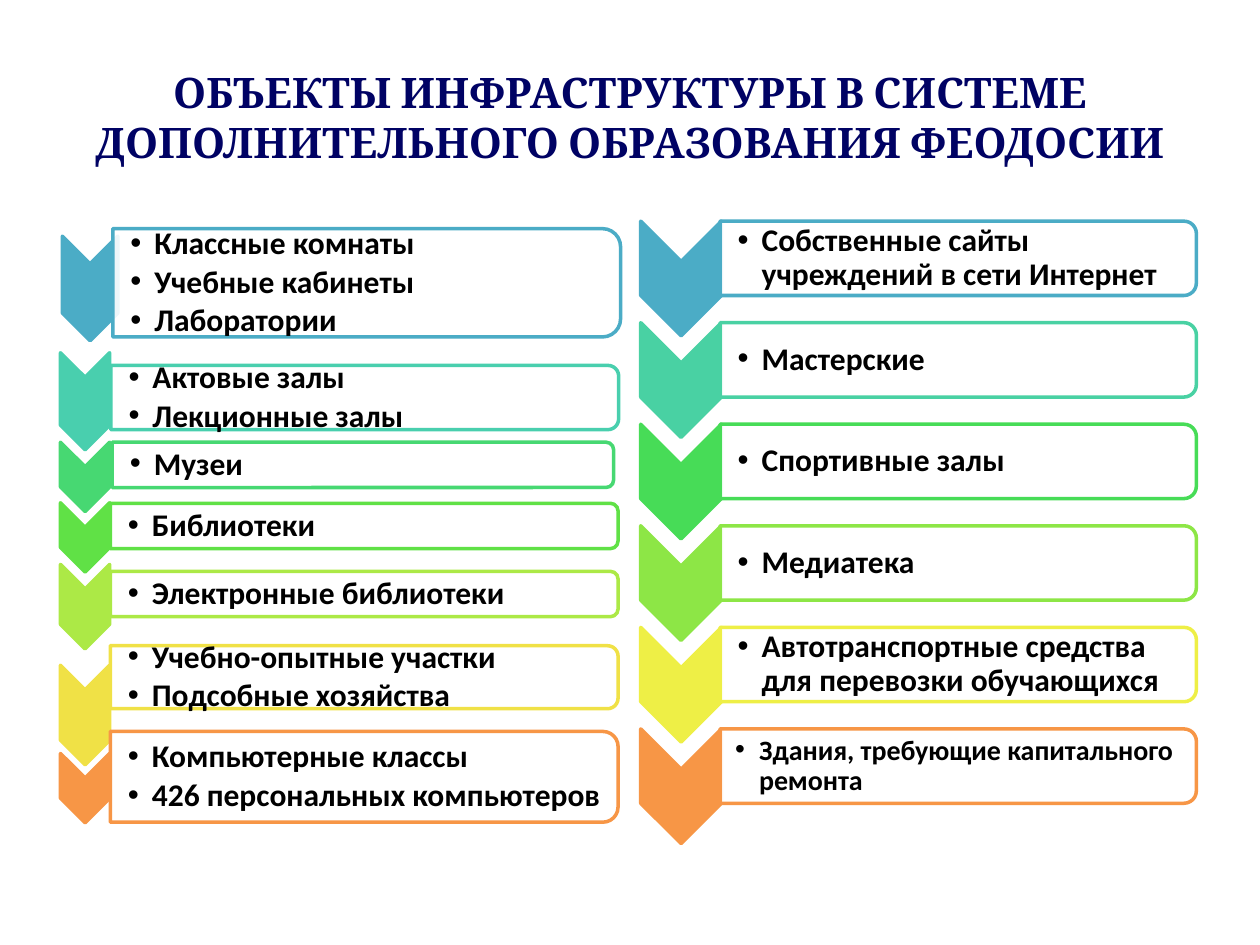
"""Builds a slide of two chevron lists on a grid of tenth-inch cells."""
import dataclasses
import typing

import lxml.etree
import pptx
import pptx.dml.color
import pptx.enum.shapes
import pptx.enum.text
import pptx.oxml.ns
import pptx.util

KIND = pptx.enum.shapes.MSO_SHAPE
ALIGN = pptx.enum.text.PP_ALIGN
ANCHOR = pptx.enum.text.MSO_ANCHOR


@dataclasses.dataclass(frozen=True)
class Theme:
    cell: float = 0.1
    navy: str = "000264"
    black: str = "000000"
    white: str = "FFFFFF"
    serif: str = "Cambria"
    sans: str = "Calibri"
    head: int = 24
    body: int = 18
    small: int = 16
    line: int = 2
    alpha: int = 90000


class Rect(typing.NamedTuple):
    x: float
    y: float
    w: float
    h: float


class Item(typing.NamedTuple):
    color: str
    arrow: Rect
    box: Rect
    lines: tuple[str, ...]
    size: int = 18
    inset: float = 1.4


THEME = Theme()

LEFT = [
    Item("4BACC6", Rect(4.95, 18.75, 4.4, 8.3), Rect(8.95, 18.15, 40.3, 8.6),
         ("Классные комнаты", "Учебные кабинеты", "Лаборатории")),
    Item("49CFAE", Rect(4.8, 28, 3.9, 7.7), Rect(8.8, 29, 40.3, 5.1),
         ("Актовые залы", "Лекционные залы")),
    Item("47D872", Rect(4.8, 35.1, 3.9, 5.5), Rect(8.9, 35.1, 39.8, 3.6),
         ("Музеи",)),
    Item("60E146", Rect(4.8, 39.9, 3.9, 5.5), Rect(8.75, 39.95, 40.3, 3.6),
         ("Библиотеки",)),
    Item("ACE946", Rect(4.8, 44.8, 3.9, 6.7), Rect(8.75, 45.35, 40.3, 3.6),
         ("Электронные библиотеки",)),
    Item("F0E146", Rect(4.8, 52.8, 3.9, 7.9), Rect(8.75, 51.25, 40.3, 5),
         ("Учебно-опытные участки", "Подсобные хозяйства")),
    Item("F79646", Rect(4.8, 59.8, 3.9, 5.5), Rect(8.75, 58.05, 40.3, 7.2),
         ("Компьютерные классы", "426 персональных компьютеров")),
]

RIGHT = [
    ("4BACC6", "Собственные сайты учреждений в сети Интернет"),
    ("49D1A3", "Мастерские"),
    ("47DC57", "Спортивные залы"),
    ("8DE646", "Медиатека"),
    ("EEEF46", "Автотранспортные средства для перевозки обучающихся"),
    ("F79646", "Здания, требующие капитального ремонта"),
]


def cells(count: float) -> int:
    """Turns grid cells into a length."""
    return pptx.util.Inches(count * THEME.cell)


def apply(target: typing.Any, values: dict[str, typing.Any]) -> None:
    """Sets each named value on the target."""
    for name, value in values.items():
        setattr(target, name, value)


def rgb(code: str) -> pptx.dml.color.RGBColor:
    """Reads a hex colour."""
    return pptx.dml.color.RGBColor.from_string(code)


def node(parent: typing.Any, tag: str, **attrs: str) -> typing.Any:
    """Adds a drawing element to its parent."""
    return lxml.etree.SubElement(parent, pptx.oxml.ns.qn(tag), attrs)


def turn(group: typing.Any, kind: typing.Any, rect: Rect, fill: str, line: str) -> typing.Any:
    """Draws a shape turned by a quarter so that it covers the rect."""
    left = rect.x + (rect.w - rect.h) / 2
    top = rect.y + (rect.h - rect.w) / 2
    shape = group.shapes.add_shape(kind, *map(cells, (left, top, rect.h, rect.w)))
    shape.rotation = 90
    shape.shadow.inherit = False
    shape.fill.solid()
    shape.fill.fore_color.rgb = rgb(fill)
    shape.line.color.rgb = rgb(line)
    shape.line.width = pptx.util.Pt(THEME.line)
    return shape


def write(para: typing.Any, text: str, face: str, size: int, color: str) -> None:
    """Adds one bold run to a paragraph."""
    run = para.add_run()
    run.text = text
    apply(run.font, {"name": face, "size": pptx.util.Pt(size), "bold": True})
    run.font.color.rgb = rgb(color)


def bullet(para: typing.Any) -> None:
    """Gives a paragraph its indent, spacing and bullet."""
    apply(para, {"level": 1, "alignment": ALIGN.LEFT, "line_spacing": 0.9})
    props = para._p.get_or_add_pPr()
    step = cells(1.9)
    props.set("marL", str(step))
    props.set("indent", str(-step))
    node(node(props, "a:spcAft"), "a:spcPct", val="15000")
    node(props, "a:buFont", typeface="Arial")
    node(props, "a:buChar", char="•")


def label(group: typing.Any, item: Item) -> None:
    """Writes the bulleted lines inside an item's box."""
    box = item.box
    pad = box.h * 0.05
    area = (box.x, box.y + pad, box.w - pad, box.h - 2 * pad)
    frame = group.shapes.add_textbox(*map(cells, area)).text_frame
    edge = cells(0.1)
    apply(frame, {"word_wrap": True, "vertical_anchor": ANCHOR.MIDDLE,
                  "margin_left": cells(item.inset), "margin_right": edge,
                  "margin_top": edge, "margin_bottom": edge})
    for index, text in enumerate(item.lines):
        para = frame.add_paragraph() if index else frame.paragraphs[0]
        bullet(para)
        write(para, text, THEME.sans, item.size, THEME.black)


def column(slide: typing.Any, items: list[Item]) -> None:
    """Draws a group of items, each an arrow, a box and its text."""
    group = slide.shapes.add_group_shape()
    for item in items:
        turn(group, KIND.CHEVRON, item.arrow, item.color, item.color)
        box = turn(group, KIND.ROUND_2_SAME_RECTANGLE, item.box, THEME.white, item.color)
        paint = box.fill._xPr.find(".//" + pptx.oxml.ns.qn("a:srgbClr"))
        node(paint, "a:alpha", val=str(THEME.alpha))
        label(group, item)


def even(rows: list[tuple[str, str]]) -> list[Item]:
    """Spaces the right items evenly, the last one in smaller type."""
    items = []
    for index, (color, text) in enumerate(rows):
        top = 17.55 + 8.06 * index
        items.append(Item(color, Rect(50.85, top, 6.4, 9.1), Rect(57.15, top, 37.8, 5.9), (text,)))
    items[-1] = items[-1]._replace(size=THEME.small, inset=1.2)
    return items


def title(slide: typing.Any, text: str) -> None:
    """Writes the centred heading."""
    frame = slide.shapes.add_textbox(*map(cells, (5, 3, 90, 12.5))).text_frame
    apply(frame, {"word_wrap": True, "vertical_anchor": ANCHOR.MIDDLE})
    para = frame.paragraphs[0]
    para.alignment = ALIGN.CENTER
    write(para, text, THEME.serif, THEME.head, THEME.navy)


def main() -> None:
    """Builds and saves the slide."""
    deck = pptx.Presentation()
    apply(deck, {"slide_width": cells(100), "slide_height": cells(75)})
    slide = deck.slides.add_slide(deck.slide_layouts[6])
    title(slide, "ОБЪЕКТЫ ИНФРАСТРУКТУРЫ В СИСТЕМЕ ДОПОЛНИТЕЛЬНОГО ОБРАЗОВАНИЯ ФЕОДОСИИ")
    column(slide, LEFT)
    column(slide, even(RIGHT))
    deck.save("out.pptx")


if __name__ == "__main__":
    main()
